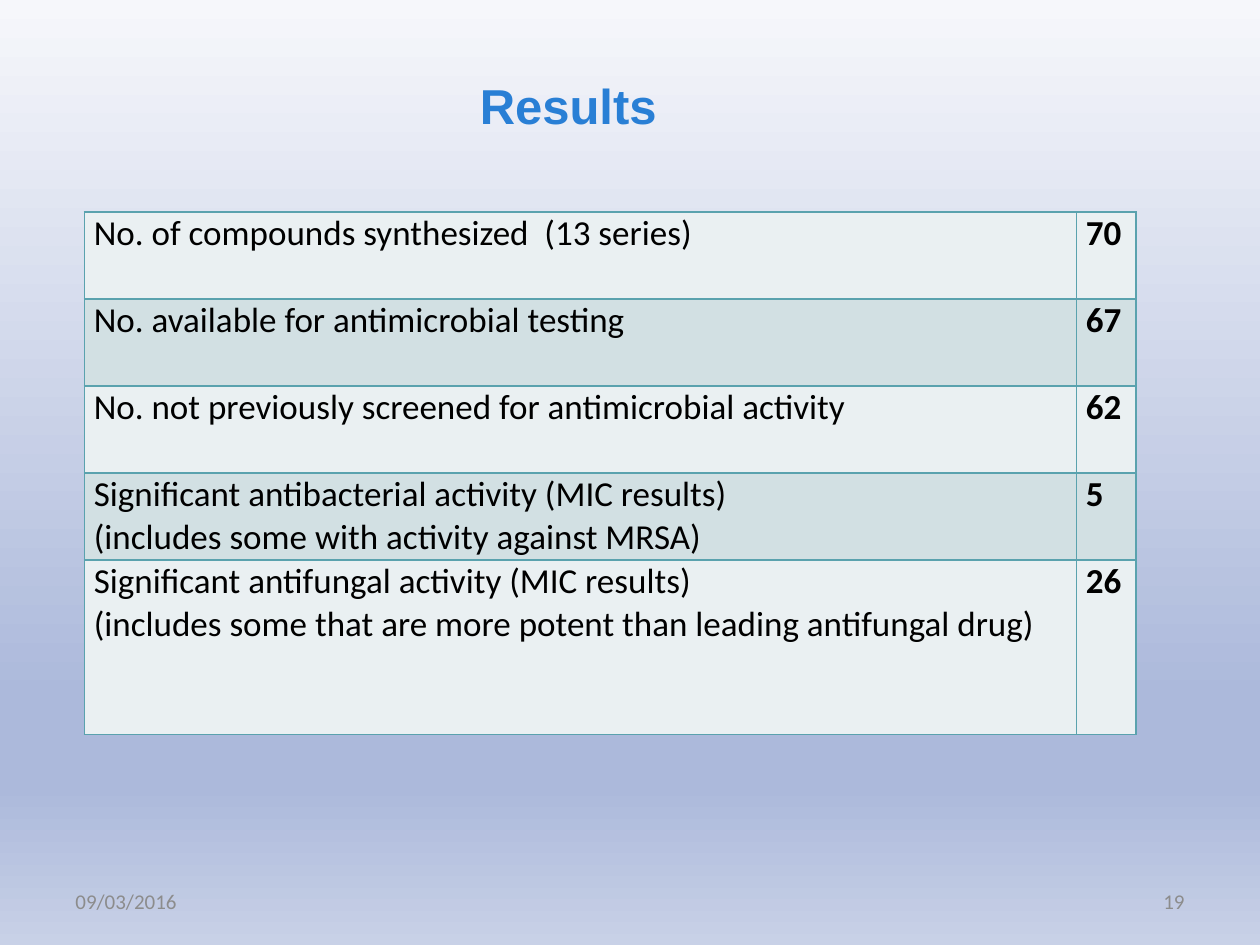
import dataclasses

import pptx
import pptx.dml.color
import pptx.enum.text
import pptx.oxml
import pptx.oxml.ns
import pptx.util
from lxml import etree

Pt = pptx.util.Pt
Align = pptx.enum.text.PP_ALIGN
Anchor = pptx.enum.text.MSO_ANCHOR


@dataclasses.dataclass(frozen=True)
class Theme:
    title_font: str = "Arial"
    body_font: str = "Calibri"
    title_size: int = 28
    body_size: int = 20
    footer_size: int = 12
    title_color: str = "297FD5"
    body_color: str = "000000"
    footer_color: str = "8C8C8C"
    border_color: str = "5AA2AE"
    band_colors: tuple = ("EAF0F2", "D2E0E3")
    background_stops: tuple = ((0, "F6F7FB"), (74, "ACB9DB"), (83, "ACB9DB"), (100, "C8D1E7"))


THEME = Theme()

RESULTS = [
    ("No. of compounds synthesized  (13 series)", "70"),
    ("No. available for antimicrobial testing", "67"),
    ("No. not previously screened for antimicrobial activity", "62"),
    ("Significant antibacterial activity (MIC results)\n(includes some with activity against MRSA)", "5"),
    ("Significant antifungal activity (MIC results)\n"
     "(includes some that are more potent than leading antifungal drug)", "26"),
]


def rgb(color):
    return pptx.dml.color.RGBColor.from_string(color)


def format_text(text_frame, font, size, color, bold=False, align=Align.LEFT):
    for paragraph in text_frame.paragraphs:
        paragraph.alignment = align
        for run in paragraph.runs:
            run.font.name = font
            run.font.size = Pt(size)
            run.font.bold = bold
            run.font.color.rgb = rgb(color)


def paint_background(slide):
    fill = slide.background.fill
    fill.gradient()
    fill.gradient_angle = 270
    stop_list = next(slide.element.iter(pptx.oxml.ns.qn("a:gsLst")))
    for stop in list(stop_list):
        stop_list.remove(stop)
    for position, color in THEME.background_stops:
        stop = etree.SubElement(stop_list, pptx.oxml.ns.qn("a:gs"), pos=str(position * 1000))
        etree.SubElement(stop, pptx.oxml.ns.qn("a:srgbClr"), val=color)


def place_title(slide, text, left, top, width, height):
    title = slide.shapes.title
    title.left, title.top, title.width, title.height = Pt(left), Pt(top), Pt(width), Pt(height)
    text_frame = title.text_frame
    text_frame.text = text
    text_frame.vertical_anchor = Anchor.TOP
    text_frame.auto_size = pptx.enum.text.MSO_AUTO_SIZE.SHAPE_TO_FIT_TEXT
    format_text(text_frame, THEME.title_font, THEME.title_size, THEME.title_color, True, Align.CENTER)


def add_borders(cell):
    properties = cell._tc.get_or_add_tcPr()
    for index, side in enumerate(("lnL", "lnR", "lnT", "lnB")):
        properties.insert(index, pptx.oxml.parse_xml(
            f'<a:{side} {pptx.oxml.ns.nsdecls("a")} w="{Pt(1)}"><a:solidFill>'
            f'<a:srgbClr val="{THEME.border_color}"/></a:solidFill></a:{side}>'))


def format_cell(cell, text, fill_color, bold):
    cell.margin_left = cell.margin_right = Pt(5.4)
    cell.margin_top = cell.margin_bottom = Pt(0)
    cell.fill.solid()
    cell.fill.fore_color.rgb = rgb(fill_color)
    cell.text_frame.text = text
    format_text(cell.text_frame, THEME.body_font, THEME.body_size, THEME.body_color, bold)
    add_borders(cell)


def place_results_table(slide, results, left, top, width, height):
    count_width = 34
    row_height = height / (len(results) + 1)
    frame = slide.shapes.add_table(len(results), 2, Pt(left), Pt(top), Pt(width), Pt(height))
    table = frame.table
    table.first_row = table.horz_banding = False
    table.columns[0].width = Pt(width - count_width)
    table.columns[1].width = Pt(count_width)
    for index, (description, count) in enumerate(results):
        is_last = index == len(results) - 1
        table.rows[index].height = Pt(row_height * (2 if is_last else 1))
        band = THEME.band_colors[index % 2]
        format_cell(table.cell(index, 0), description, band, False)
        format_cell(table.cell(index, 1), count, band, True)


def place_footer(slide, date, number, left, top, width, height):
    box_width = 168
    parts = ((date, left, Align.LEFT), (number, left + width - box_width, Align.RIGHT))
    for text, box_left, align in parts:
        box = slide.shapes.add_textbox(Pt(box_left), Pt(top), Pt(box_width), Pt(height))
        text_frame = box.text_frame
        text_frame.word_wrap = True
        text_frame.vertical_anchor = Anchor.MIDDLE
        text_frame.text = text
        format_text(text_frame, THEME.body_font, THEME.footer_size, THEME.footer_color, align=align)


def main():
    presentation = pptx.Presentation()
    presentation.slide_width, presentation.slide_height = Pt(720), Pt(540)
    slide = presentation.slides.add_slide(presentation.slide_layouts.get_by_name("Title Only"))
    paint_background(slide)
    place_title(slide, "Results", 144.7, 39.6, 360, 41)
    place_results_table(slide, RESULTS, 48.2, 121, 601, 298.8)
    place_footer(slide, "09/03/2016", "19", 36, 500.5, 648, 28.8)
    presentation.save("out.pptx")


if __name__ == "__main__":
    main()
